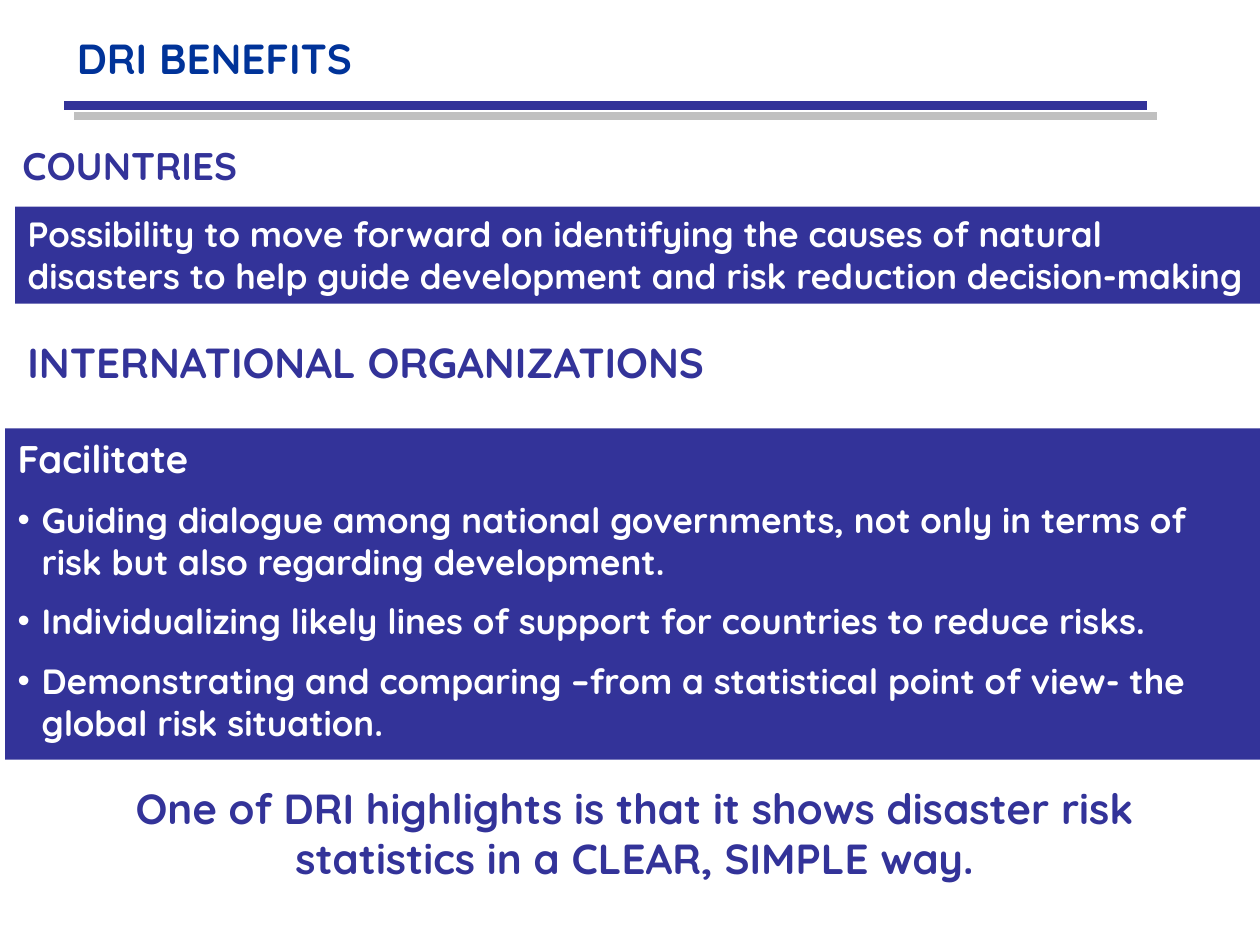
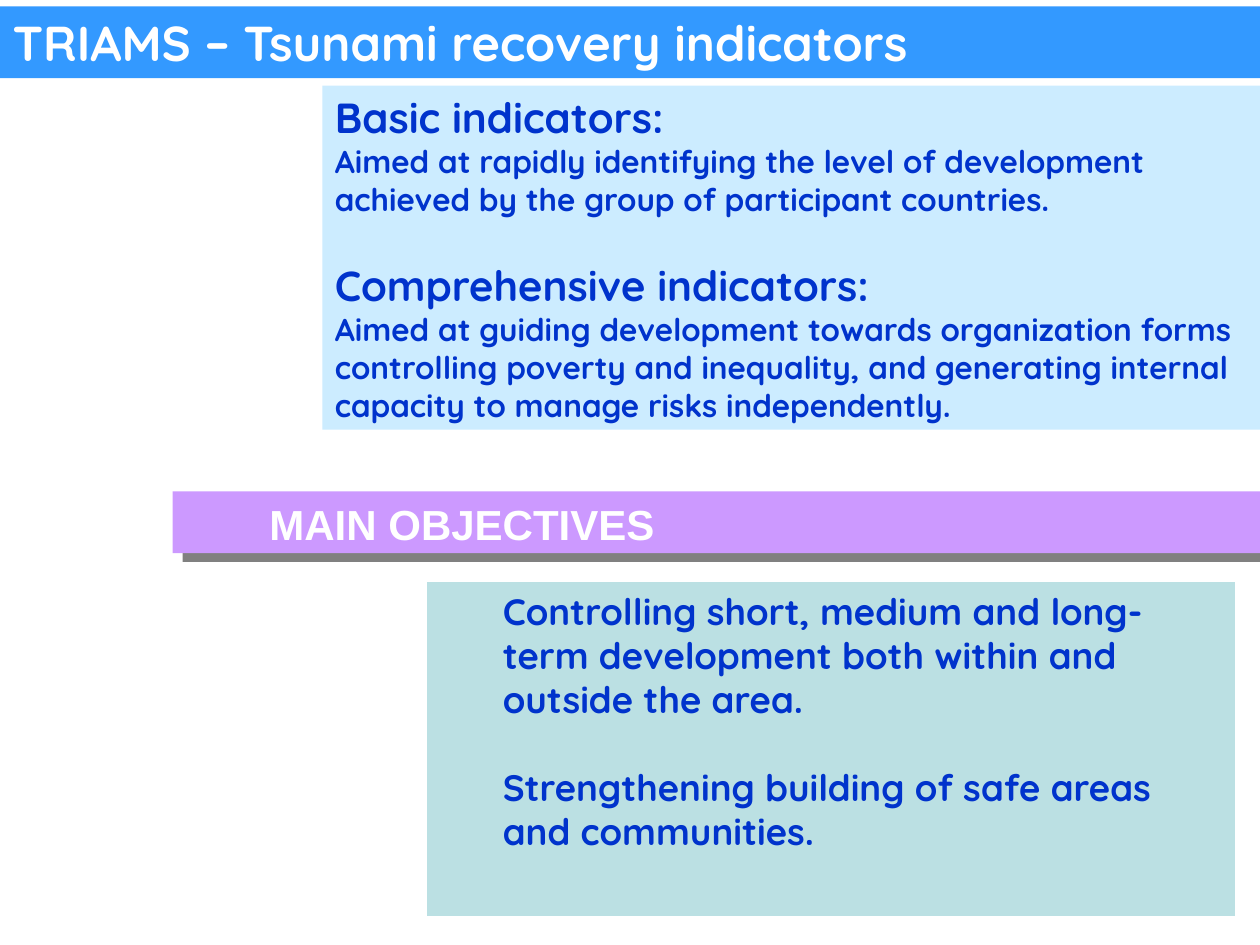
import pptx
import pptx.util
import pptx.dml.color
import pptx.enum.shapes
import pptx.enum.text
import pptx.oxml.ns
import lxml.etree

Inches, Pt = pptx.util.Inches, pptx.util.Pt
Color = pptx.dml.color.RGBColor
Align = pptx.enum.text.PP_ALIGN

FACE = "Quicksand"
WHITE = Color(0xFF, 0xFF, 0xFF)
NAVY = Color(0x33, 0x33, 0x99)
TITLE = Color(0x00, 0x33, 0x99)
BLUE = Color(0x00, 0x33, 0xCC)
SKY = Color(0x33, 0x99, 0xFF)
PALE = Color(0xCC, 0xEC, 0xFF)
LILAC = Color(0xCC, 0x99, 0xFF)
TEAL = Color(0xBB, 0xE0, 0xE3)
GRAY = Color(0x80, 0x80, 0x80)
SILVER = Color(0xC0, 0xC0, 0xC0)


def add_mark(props, tag, **attrs):
    return lxml.etree.SubElement(props, pptx.oxml.ns.qn(tag), **attrs)


def write(frame, text, size=20, color=WHITE, face=FACE, align=Align.LEFT,
          gap=0, left=0, hang=0, bullet=None):
    """Add one paragraph to a frame; the first one fills the empty start."""
    first = not frame.text
    para = frame.paragraphs[0] if first else frame.add_paragraph()
    props = para._p.get_or_add_pPr()
    props.set("marL", str(Inches(left)))
    props.set("indent", str(-Inches(hang)))
    if bullet:
        add_mark(props, "a:buChar", char=bullet)
    else:
        add_mark(props, "a:buNone")
    para.alignment = align
    para.space_before = Pt(0 if first else gap)
    run = para.add_run()
    run.text = text
    font = run.font
    font.name, font.size, font.bold = face, Pt(size), True
    font.color.rgb = color


class Deck:
    def __init__(self):
        self.show = pptx.Presentation()
        self.show.slide_width = Inches(10)
        self.show.slide_height = Inches(7.5)
        self.slide = None

    def start(self):
        self.slide = self.show.slides.add_slide(self.show.slide_layouts[1])

    def setup(self, shape, fill=None):
        """Give any text holder the same frame rules; return its frame."""
        if fill is not None:
            shape.fill.solid()
            shape.fill.fore_color.rgb = fill
        frame = shape.text_frame
        frame.word_wrap = True
        frame.auto_size = pptx.enum.text.MSO_AUTO_SIZE.NONE
        frame.vertical_anchor = pptx.enum.text.MSO_ANCHOR.TOP
        return frame

    def place(self, shape, box, fill=None):
        shape.left, shape.top, shape.width, shape.height = map(Inches, box)
        return self.setup(shape, fill)

    def title(self, text, box, fill=None, **style):
        write(self.place(self.slide.shapes.title, box, fill), text, **style)

    def body(self, box, fill):
        return self.place(self.slide.placeholders[1], box, fill)

    def panel(self, box, fill):
        kind = pptx.enum.shapes.MSO_SHAPE.RECTANGLE
        shape = self.slide.shapes.add_shape(kind, *map(Inches, box))
        shape.shadow.inherit = False
        shape.line.fill.background()
        return self.setup(shape, fill)

    def label(self, text, box, **style):
        shape = self.slide.shapes.add_textbox(*map(Inches, box))
        write(self.setup(shape), text, **style)

    def rule(self, left, top, width, color):
        kind = pptx.enum.shapes.MSO_CONNECTOR.STRAIGHT
        ends = map(Inches, (left, top, left + width, top))
        line = self.slide.shapes.add_connector(kind, *ends)
        line.line.color.rgb = color
        line.line.width = Pt(5)
        add_mark(line._element.spPr, "a:effectLst")


def benefits(deck):
    deck.start()
    deck.title("DRI BENEFITS", (0.51, 0.21, 8.5, 0.6), size=24, color=TITLE)
    for shift, color in ((0.08, SILVER), (0, NAVY)):
        deck.rule(0.51 + shift, 0.84 + shift, 8.59, color)

    deck.label("COUNTRIES", (0.08, 1.08, 2.48, 0.47), size=22, color=NAVY)
    write(deck.panel((0.12, 1.64, 9.88, 0.77), NAVY),
          "Possibility to move forward on identifying the causes of natural "
          "disasters to help guide development and risk reduction "
          "decision-making")

    deck.label("INTERNATIONAL ORGANIZATIONS", (0.12, 2.62, 6.3, 0.5),
               size=24, color=NAVY)
    frame = deck.body((0.04, 3.4, 9.96, 2.63), NAVY)
    write(frame, "Facilitate", size=22, left=0.19, hang=0.19)
    for item in (
        "Guiding dialogue among national governments, not only in terms of "
        "risk but also regarding development.",
        "Individualizing likely lines of support for countries to reduce "
        "risks.",
        "Demonstrating and comparing –from a statistical point of view- the "
        "global risk situation.",
    ):
        write(frame, item, gap=10, left=0.19, hang=0.19, bullet="•")

    deck.label("One of DRI highlights is that it shows disaster risk "
               "statistics in a CLEAR, SIMPLE way.", (0.35, 6.16, 9.37, 0.9),
               size=24, color=NAVY, align=Align.CENTER)


def triams(deck):
    deck.start()
    deck.title("TRIAMS – Tsunami recovery indicators", (0, 0.05, 10, 0.57),
               fill=SKY, size=28)

    frame = deck.panel((2.56, 0.68, 7.44, 2.73), PALE)
    for head, text in (
        ("Basic indicators:",
         "Aimed at rapidly identifying the level of development achieved by "
         "the group of participant countries."),
        ("Comprehensive indicators:",
         "Aimed at guiding development towards organization forms "
         "controlling poverty and inequality, and generating internal "
         "capacity to manage risks independently."),
    ):
        write(frame, head, size=24, color=BLUE, gap=24)
        write(frame, text, size=18, color=BLUE)

    deck.panel((1.45, 3.97, 8.55, 0.49), GRAY)
    band = deck.panel((1.37, 3.9, 8.63, 0.49), LILAC)
    band.margin_top = Inches(0.06)
    write(band, "MAIN OBJECTIVES", size=24, face="Arial", left=0.67)

    frame = deck.body((3.39, 4.62, 6.41, 2.65), TEAL)
    for goal in (
        "Controlling short, medium and long-term development both within "
        "and outside the area.",
        "Strengthening building of safe areas and communities.",
    ):
        write(frame, goal, size=21, color=BLUE, gap=25, left=0.5)


def main():
    deck = Deck()
    benefits(deck)
    triams(deck)
    deck.show.save("out.pptx")


if __name__ == "__main__":
    main()
